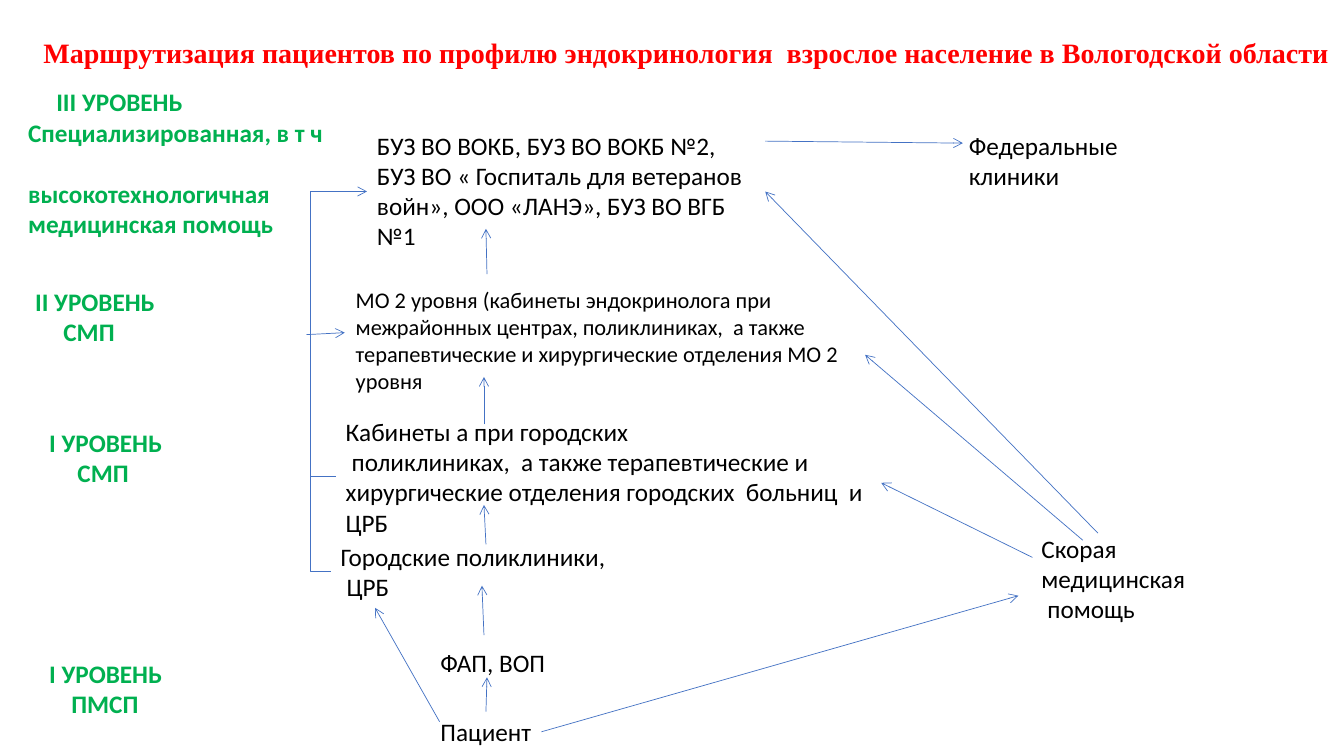
from dataclasses import dataclass
from typing import NamedTuple

from lxml import etree
from pptx import Presentation
from pptx import util as u
from pptx.dml import color
from pptx.enum import shapes, text
from pptx.oxml import ns


@dataclass(frozen=True)
class Theme:
    title: str = "FF0000"
    level: str = "00B050"
    body: str = "000000"
    arrow: str = "4472C4"
    body_font: str = "Calibri"
    title_font: str = "Times New Roman"
    title_size: int = 20
    body_size: int = 18
    small_size: int = 16
    line_width: float = 0.5


THEME = Theme()


class Line(NamedTuple):
    words: str
    indent: float = 0
    before: float = 0


@dataclass
class Block:
    left: float
    top: float
    width: float
    height: float
    lines: list[Line]
    tint: str = THEME.body
    size: int = THEME.body_size
    bold: bool = False
    wrap: bool = True
    font: str = THEME.body_font


@dataclass
class Level(Block):
    tint: str = THEME.level
    bold: bool = True


class Route(NamedTuple):
    start: tuple[float, float]
    end: tuple[float, float]
    head: bool = True
    preset: str = "line"
    bend: int | None = None


TITLE = Block(0.33, 0.3, 15.14, 0.44, [
    Line("Маршрутизация пациентов по профилю эндокринология  взрослое население в Вологодской области")],
    tint=THEME.title, size=THEME.title_size, bold=True, font=THEME.title_font)

LEVELS = [
    Level(0.18, 0.81, 3.45, 1.31, [
        Line("III УРОВЕНЬ", 0.28), Line("Специализированная, в т ч"),
        Line("высокотехнологичная", before=22), Line("медицинская помощь")]),
    Level(0.19, 2.79, 2.61, 0.71, [Line("II УРОВЕНЬ", 0.06), Line("СМП", 0.34)]),
    Level(0.33, 4.19, 1.93, 0.71, [Line("I УРОВЕНЬ", 0.06), Line("СМП", 0.34)]),
    Level(0.33, 6.48, 2.36, 1.01, [Line("I УРОВЕНЬ", 0.06), Line("ПМСП", 0.28)]),
]

PROVIDERS = [
    Block(3.64, 1.24, 3.95, 1.31, [
        Line("БУЗ ВО ВОКБ, БУЗ ВО ВОКБ №2, БУЗ ВО « Госпиталь для ветеранов войн», "
             "ООО «ЛАНЭ», БУЗ ВО ВГБ №1")]),
    Block(9.51, 1.24, 2.59, 0.71, [Line("Федеральные"), Line("клиники")]),
    Block(3.43, 2.79, 5.58, 1.18, [
        Line("МО 2 уровня (кабинеты эндокринолога при межрайонных центрах, поликлиниках,  "
             "а также терапевтические и хирургические отделения МО 2 уровня")],
        size=THEME.small_size),
    Block(3.33, 4.08, 5.83, 1.31, [
        Line("Кабинеты а при городских"),
        Line("поликлиниках,  а также терапевтические и хирургические отделения "
             "городских  больниц  и  ЦРБ", 0.06)]),
    Block(3.28, 5.32, 4.75, 0.71, [Line("Городские поликлиники,"), Line("ЦРБ", 0.06)]),
    Block(4.27, 6.37, 1.6, 0.4, [Line("ФАП, ВОП")]),
    Block(4.27, 7.06, 1.1, 0.4, [Line("Пациент")], wrap=False),
    Block(10.23, 5.24, 3.95, 1.01, [
        Line("Скорая"), Line("медицинская"), Line("помощь", 0.06)]),
]

ROUTES = [
    Route((4.82, 7.06), (4.83, 6.72)),
    Route((4.8, 6.3), (4.78, 5.81)),
    Route((4.82, 5.4), (4.8, 5.01)),
    Route((4.8, 4.21), (4.8, 3.74)),
    Route((4.83, 2.72), (4.82, 2.27)),
    Route((4.36, 7.16), (3.72, 6.03)),
    Route((5.37, 7.26), (10.1, 5.91)),
    Route((10.24, 5.53), (8.74, 4.79)),
    Route((10.74, 5.36), (8.58, 3.52)),
    Route((10.89, 5.29), (7.59, 1.9)),
    Route((7.59, 1.4), (9.55, 1.42)),
    Route((3.33, 4.73), (3.64, 1.9), preset="bentConnector3", bend=-80700),
    Route((3.28, 5.67), (3.08, 4.57), head=False, preset="bentConnector2"),
    Route((3.04, 3.32), (3.42, 3.3)),
]


def apply(target: object, values: dict[str, object]) -> None:
    for name, value in values.items():
        setattr(target, name, value)


def fill_block(shape, block: Block) -> None:
    apply(shape, {"left": u.Inches(block.left), "top": u.Inches(block.top),
                  "width": u.Inches(block.width), "height": u.Inches(block.height)})
    frame = shape.text_frame
    apply(frame, {"word_wrap": block.wrap, "vertical_anchor": text.MSO_ANCHOR.TOP,
                  "auto_size": text.MSO_AUTO_SIZE.SHAPE_TO_FIT_TEXT})
    for index, line in enumerate(block.lines):
        paragraph = frame.add_paragraph() if index else frame.paragraphs[0]
        apply(paragraph, {"alignment": text.PP_ALIGN.LEFT, "line_spacing": 1.0,
                          "space_before": u.Pt(line.before), "space_after": u.Pt(0)})
        if line.indent:
            properties = paragraph._p.get_or_add_pPr()
            properties.set("marL", "0")
            properties.set("indent", str(u.Inches(line.indent)))
        run = paragraph.add_run()
        run.text = line.words
        apply(run.font, {"name": block.font, "size": u.Pt(block.size), "bold": block.bold})
        run.font.color.rgb = color.RGBColor.from_string(block.tint)


def draw_route(slide, route: Route) -> None:
    kind = shapes.MSO_CONNECTOR.STRAIGHT if route.preset == "line" else shapes.MSO_CONNECTOR.ELBOW
    ends = [u.Inches(value) for value in (*route.start, *route.end)]
    connector = slide.shapes.add_connector(kind, *ends)
    connector.line.width = u.Pt(THEME.line_width)
    connector.line.color.rgb = color.RGBColor.from_string(THEME.arrow)
    properties = connector._element.spPr
    geometry = properties.find(ns.qn("a:prstGeom"))
    geometry.set("prst", route.preset)
    if route.bend is not None:
        guides = geometry.find(ns.qn("a:avLst"))
        if guides is None:
            guides = etree.SubElement(geometry, ns.qn("a:avLst"))
        etree.SubElement(guides, ns.qn("a:gd"), name="adj1", fmla=f"val {route.bend}")
    if route.head:
        etree.SubElement(properties.find(ns.qn("a:ln")), ns.qn("a:tailEnd"), type="arrow")
    etree.SubElement(properties, ns.qn("a:effectLst"))


def main() -> None:
    deck = Presentation()
    apply(deck, {"slide_width": u.Inches(13.33), "slide_height": u.Inches(7.5)})
    slide = deck.slides.add_slide(deck.slide_layouts[5])
    fill_block(slide.shapes.title, TITLE)
    for block in LEVELS + PROVIDERS:
        fill_block(slide.shapes.add_textbox(0, 0, 0, 0), block)
    for route in ROUTES:
        draw_route(slide, route)
    deck.save("out.pptx")


if __name__ == "__main__":
    main()
